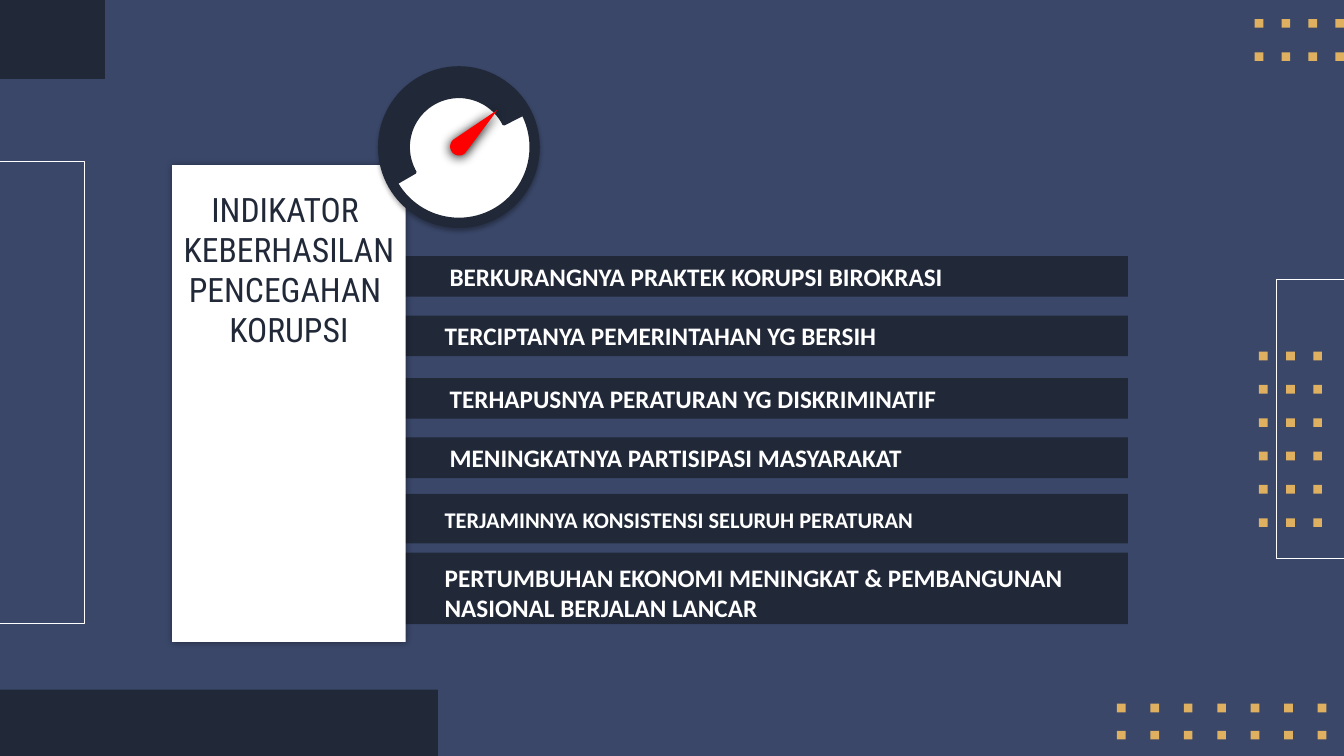
from dataclasses import dataclass
from math import cos, radians, sin

from lxml.etree import SubElement
from pptx import Presentation
from pptx.dml.color import RGBColor as RGB
from pptx.enum.shapes import MSO_SHAPE as Shape
from pptx.enum.text import MSO_ANCHOR as Anchor, MSO_AUTO_SIZE as Auto, PP_ALIGN as Align
from pptx.oxml.ns import qn
from pptx.util import Pt

TITLE = ["INDIKATOR ", "KEBERHASILAN ", "PENCEGAHAN ", "KORUPSI"]
# text, top, height, left inset, top inset, type size
BARS = [
    ("BERKURANGNYA PRAKTEK KORUPSI BIROKRASI", 182.9, 29, 37.8, 0, 18),
    ("TERCIPTANYA PEMERINTAHAN YG BERSIH", 225.4, 29, 34.2, 0, 18),
    ("TERHAPUSNYA PERATURAN YG DISKRIMINATIF", 270, 29, 37.8, 0, 18),
    ("MENINGKATNYA PARTISIPASI MASYARAKAT", 312.5, 29, 37.8, 0, 18),
    ("TERJAMINNYA KONSISTENSI SELURUH PERATURAN", 352.8, 35.3, 34.2, 1, 16),
    ("PERTUMBUHAN EKONOMI MENINGKAT & PEMBANGUNAN NASIONAL BERJALAN LANCAR",
     394.8, 51, 34.2, 6, 18),
]
BLOCKS = [(0, 0, 75, 56.4), (0, 492.6, 312.8, 47.4)]
FRAMES = [
    [(960, 398.9), (911.7, 398.9), (911.7, 199.4), (960, 199.4)],
    [(0, 445.3), (60.5, 445.3), (60.5, 115.4), (0, 115.4)],
]
# left, top, columns, rows, column step, row step
DOTS = [
    (797.8, 502.6, 7, 2, 23.9, 19.4),
    (899.3, 251.2, 3, 6, 19.4, 23.8),
    (896.2, 13.6, 4, 2, 19.2, 23.8),
]
DOT = 6.2
CARD = (123, 118, 166.8, 340.6)
HEAD = (123, 131, 166.8, 133.2)
BAR_X, BAR_W = 283.4, 522.3
DIAL = (327.8, 105.1)
HUB, TIP = (328, 104.7), (355.4, 78.5)


@dataclass(frozen=True)
class Theme:
    """Hold the colours, fonts and title size."""
    back: str = "3A4769"
    dark: str = "212838"
    gold: str = "DFB05F"
    light: str = "FFFFFF"
    red: str = "FF0000"
    black: str = "000000"
    body: str = "Calibri"
    head: str = "Roboto Condensed"
    title: int = 24


T = Theme()


def paint(item, fill=None, line=None, width=0.75):
    """Set the fill and outline and drop the theme shadow."""
    item.shadow.inherit = False
    if fill:
        item.fill.solid()
        item.fill.fore_color.rgb = RGB.from_string(fill)
    else:
        item.fill.background()
    if line:
        item.line.color.rgb = RGB.from_string(line)
        item.line.width = Pt(width)
    else:
        item.line.fill.background()
    return item


def shade(item, alpha, blur, dist):
    """Give a shape a soft black shadow that falls downwards."""
    box = item.element.spPr.find(qn("a:effectLst"))
    glow = SubElement(box, qn("a:outerShdw"), blurRad=str(Pt(blur)),
                      dist=str(Pt(dist)), dir="5400000", algn="ctr", rotWithShape="0")
    tint = SubElement(glow, qn("a:srgbClr"), val=T.black)
    SubElement(tint, qn("a:alpha"), val=str(alpha * 1000))


def add(slide, kind, box, *look):
    """Add a painted preset shape."""
    return paint(slide.shapes.add_shape(kind, *map(Pt, box)), *look)


def trace(slide, spots, close, *look):
    """Add a painted outline through the given points."""
    first, *rest = [(Pt(x), Pt(y)) for x, y in spots]
    pen = slide.shapes.build_freeform(*first, scale=1.0)
    pen.add_line_segments(rest, close=close)
    return paint(pen.convert_to_shape(), *look)


def arc(mid, size, start, end, steps=60):
    """List points along an arc, with angles in clockwise degrees."""
    turns = [radians(start + (end - start) * i / steps) for i in range(steps + 1)]
    return [(mid[0] + size * cos(a), mid[1] + size * sin(a)) for a in turns]


def disc(slide, mid, size, *look):
    """Add a circle around a centre."""
    box = (mid[0] - size, mid[1] - size, 2 * size, 2 * size)
    return add(slide, Shape.OVAL, box, *look)


def style(para, font, size, color, bold, align):
    """Format the runs of a paragraph."""
    para.alignment = align
    for run in para.runs:
        run.font.name, run.font.size, run.font.bold = font, Pt(size), bold
        run.font.color.rgb = RGB.from_string(color)


def decor(slide):
    """Draw the blocks, frames and dot grids."""
    for box in BLOCKS:
        add(slide, Shape.RECTANGLE, box, T.dark)
    for spots in FRAMES:
        trace(slide, spots, False, None, T.light)
    for x, y, cols, rows, dx, dy in DOTS:
        for i in range(cols * rows):
            spot = (x + i % cols * dx, y + i // cols * dy, DOT, DOT)
            add(slide, Shape.RECTANGLE, spot, T.gold)


def bars(slide):
    """Draw the indicator bars with their text."""
    for text, top, high, left, drop, size in BARS:
        bar = add(slide, Shape.RECTANGLE, (BAR_X, top, BAR_W, high), T.dark)
        frame = bar.text_frame
        frame.word_wrap, frame.vertical_anchor = True, Anchor.MIDDLE
        frame.margin_left, frame.margin_right = Pt(left), Pt(10.8)
        frame.margin_top, frame.margin_bottom = Pt(drop), Pt(0)
        frame.text = text
        style(frame.paragraphs[0], T.body, size, T.light, True, Align.LEFT)


def card(slide):
    """Draw the white card and set the title on it."""
    base = add(slide, Shape.RECTANGLE, CARD, T.light)
    shade(base, 40, 5, 0)
    title = slide.shapes.title
    title.left, title.top, title.width, title.height = map(Pt, HEAD)
    base.element.addnext(title.element)
    frame = title.text_frame
    frame.text = "\n".join(TITLE)
    frame.word_wrap, frame.auto_size = True, Auto.NONE
    frame.vertical_anchor = Anchor.TOP
    for para in frame.paragraphs:
        style(para, T.head, T.title, T.dark, False, Align.CENTER)


def gauge(slide):
    """Draw the dial with its ring and needle."""
    shade(disc(slide, DIAL, 57.8, T.dark), 32, 3.5, 2.2)
    disc(slide, DIAL, 51.4, T.light, T.dark, 2)
    ring = arc(DIAL, 51.4, 150, 333) + arc(DIAL, 36, 333, 150)
    trace(slide, ring, True, T.dark, T.dark, 2)
    needle = trace(slide, [TIP] + arc(HUB, 6.4, 50, 230), True, T.red)
    shade(needle, 100, 8.5, 1)


def main():
    """Build and save the slide."""
    deck = Presentation()
    deck.slide_width, deck.slide_height = Pt(960), Pt(540)
    slide = deck.slides.add_slide(deck.slide_layouts[5])
    slide.background.fill.solid()
    slide.background.fill.fore_color.rgb = RGB.from_string(T.back)
    for draw in (decor, bars, card, gauge):
        draw(slide)
    deck.save("out.pptx")


if __name__ == "__main__":
    main()
